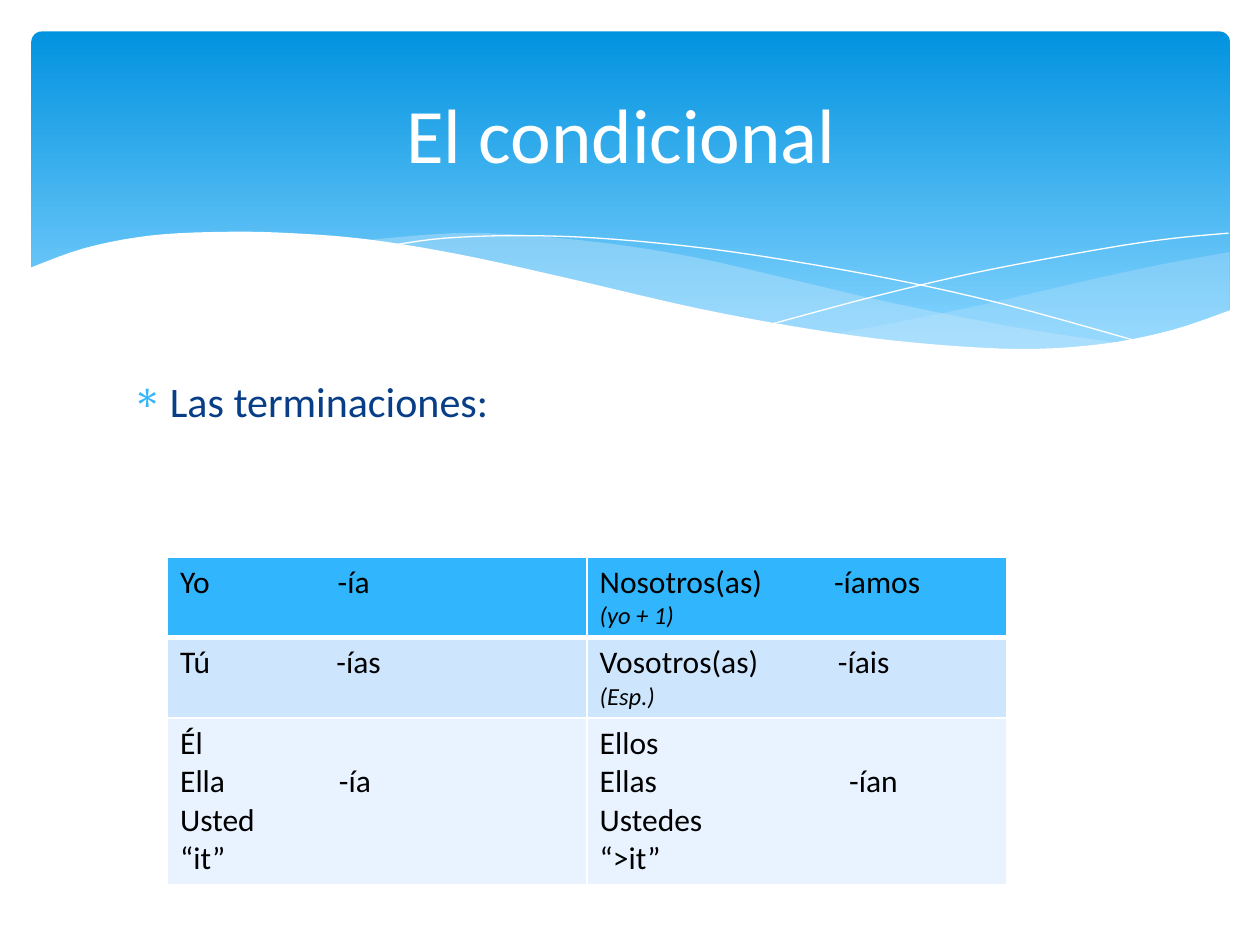
import pptx
import pptx.dml.color
import pptx.enum.shapes
import pptx.enum.text
import pptx.oxml
import pptx.oxml.ns
import pptx.util
from pptx.util import Inches, Pt

WHITE, SKY, PALE = "FFFFFF", "31B6FD", "C6E7FC"
TITLE = "El condicional "
HEADING = "Las terminaciones:"

# Waves as knots (inches) of smooth edges; a shape joins its edges in order.
RIGHT_SWELL = [
    [(9.76, 2), (9.21, 2.1), (8.61, 2.23), (7.79, 2.42), (7.06, 2.57), (6.61, 2.65)],
    [(6.61, 2.65), (7.32, 2.74), (8.03, 2.78), (8.63, 2.75), (9.21, 2.65), (9.76, 2.47)],
]
LEFT_SWELL = [
    [(8.93, 2.73), (8.07, 2.6), (7.06, 2.4), (6.29, 2.22), (5.55, 2.05), (4.89, 1.94),
     (4.2, 1.87), (3.61, 1.85), (2.86, 1.91)],
    [(2.86, 1.91), (3.62, 2.03), (4.49, 2.22), (5.66, 2.48), (6.5, 2.64), (7.22, 2.74),
     (7.96, 2.78), (8.48, 2.77), (8.93, 2.73)],
]
FALLING_LINE = [[(3.09, 1.95), (3.53, 1.89), (4.16, 1.87), (4.89, 1.9), (5.82, 2),
                 (6.95, 2.19), (7.95, 2.41), (9.07, 2.72)]]
RISING_LINE = [[(6.13, 2.57), (6.95, 2.35), (7.76, 2.16), (8.66, 1.99), (9.24, 1.9), (9.75, 1.85)]]
WHITE_WAVE = [
    [(9.77, 2.46), (9.3, 2.62), (8.75, 2.73), (8.09, 2.77), (7.26, 2.72), (6.48, 2.62),
     (5.55, 2.45), (4.47, 2.2), (3.65, 2.02), (2.92, 1.9), (2.3, 1.85), (1.77, 1.84),
     (1.19, 1.87), (0.67, 1.97), (0.23, 2.13)],
    [(0.23, 3.29), (9.77, 3.29)],
]
WAVES = [  # edges, fill, opacity %; no fill means an open white line
    (RIGHT_SWELL, PALE, 29),
    (LEFT_SWELL, PALE, 40),
    (FALLING_LINE, None, 100),
    (RISING_LINE, None, 100),
    (WHITE_WAVE, WHITE, 100),
]

# Each cell: tab stop in inches, then paragraphs.
ENDINGS = [
    [(1.25, ["Yo\t-ía"]), (1.86, ["Nosotros(as)\t-íamos", "(yo + 1)"])],
    [(1.24, ["Tú\t-ías"]), (1.89, ["Vosotros(as)\t-íais", "(Esp.)"])],
    [(1.26, ["Él", "Ella\t-ía", "Usted", "“it”"]),
     (1.98, ["Ellos", "Ellas\t-ían", "Ustedes", "“>it”"])],
]
ROW_FILLS = [SKY, "CEE5FE", "E8F3FF"]
ROW_HEIGHTS = [0.64, 0.64, 1.32]
COLUMN_WIDTH = 3.33


def color(value):
    return pptx.dml.color.RGBColor.from_string(value)


def xml(tag, attributes="", inner=""):
    namespace = pptx.oxml.ns.nsdecls("a")
    return pptx.oxml.parse_xml(f"<a:{tag} {namespace} {attributes}>{inner}</a:{tag}>")


def solid(value):
    return f'<a:solidFill><a:srgbClr val="{value}"/></a:solidFill>'


def smooth(knots, steps=5):
    """Points of a Catmull-Rom curve through the knots."""
    if len(knots) < 3:
        return knots
    padded = [knots[0], *knots, knots[-1]]
    points = []
    for a, b, c, d in zip(padded, padded[1:], padded[2:], padded[3:]):
        for step in range(steps):
            t = step / steps
            points.append(tuple(
                q + t * (r - p) / 2 + t * t * (2 * p - 5 * q + 4 * r - s) / 2
                + t ** 3 * (3 * q - p - 3 * r + s) / 2
                for p, q, r, s in zip(a, b, c, d)))
    return points + [knots[-1]]


def add_wave(shapes, edges, fill, opacity):
    points = [(Inches(x), Inches(y)) for edge in edges for x, y in smooth(edge)]
    builder = shapes.build_freeform(*points[0])
    builder.add_line_segments(points[1:], close=fill is not None)
    shape = builder.convert_to_shape()
    shape.shadow.inherit = False
    if fill is None:
        shape.fill.background()
        shape.line.color.rgb = color(WHITE)
        shape.line.width = Pt(0)
        return
    shape.line.fill.background()
    shape.fill.solid()
    shape.fill.fore_color.rgb = color(fill)
    if opacity < 100:
        srgb = shape.fill._xPr.find(".//" + pptx.oxml.ns.qn("a:srgbClr"))
        srgb.append(xml("alpha", f'val="{opacity * 1000}"'))


def add_run(paragraph, text, size, value, italic=False):
    run = paragraph.add_run()
    run.text = text
    run.font.name = "Calibri"
    run.font.size = Pt(size)
    run.font.italic = italic
    run.font.color.rgb = color(value)


def add_text_box(shapes, box, text, size, value):
    frame = shapes.add_textbox(*map(Inches, box)).text_frame
    frame.word_wrap = True
    add_run(frame.paragraphs[0], text, size, value)
    return frame


def fill_cell(cell, row, tab, lines):
    for index, line in enumerate(lines):
        frame = cell.text_frame
        paragraph = frame.add_paragraph() if index else frame.paragraphs[0]
        note = line.startswith("(")
        add_run(paragraph, line, 14 if note else 18, "000000", note)
        if "\t" in line:
            paragraph._p.get_or_add_pPr().append(
                xml("tabLst", "", f'<a:tab pos="{Inches(tab)}" algn="l"/>'))
    cell.fill.solid()
    cell.fill.fore_color.rgb = color(ROW_FILLS[row])
    widths = {"lnL": 1, "lnR": 1, "lnT": 3 if row == 1 else 1, "lnB": 3 if row == 0 else 1}
    for position, (side, width) in enumerate(widths.items()):
        cell._tc.get_or_add_tcPr().insert(
            position, xml(side, f'w="{Pt(width)}"', solid(WHITE)))


def add_banner(shapes):
    banner = shapes.add_shape(pptx.enum.shapes.MSO_SHAPE.ROUNDED_RECTANGLE,
                              Inches(0.25), Inches(0.25), Inches(9.51), Inches(2.7))
    banner.adjustments[0] = 0.03
    banner.shadow.inherit = False
    banner.line.fill.background()
    banner.fill.gradient()
    banner.fill.gradient_angle = 270
    for stop, position, value in zip(banner.fill.gradient_stops, (0, 0.9), ("0293E0", "83D3FE")):
        stop.position = position
        stop.color.rgb = color(value)


def add_endings_table(shapes):
    table = shapes.add_table(len(ENDINGS), 2, Inches(1.33), Inches(4.42),
                             Inches(2 * COLUMN_WIDTH), Inches(sum(ROW_HEIGHTS))).table
    table.first_row = table.horz_banding = False
    for column in table.columns:
        column.width = Inches(COLUMN_WIDTH)
    for row, cells in enumerate(ENDINGS):
        table.rows[row].height = Inches(ROW_HEIGHTS[row])
        for column, (tab, lines) in enumerate(cells):
            fill_cell(table.cell(row, column), row, tab, lines)


def main():
    presentation = pptx.Presentation()
    presentation.slide_width, presentation.slide_height = Inches(10), Inches(7.5)
    shapes = presentation.slides.add_slide(presentation.slide_layouts[6]).shapes

    add_banner(shapes)
    for wave in WAVES:
        add_wave(shapes, *wave)

    body = add_text_box(shapes, (0.95, 2.93, 8.1, 3.77), HEADING, 24, "073E87")
    bullet = body.paragraphs[0]
    bullet.space_before = Pt(4.8)
    properties = bullet._p.get_or_add_pPr()
    properties.set("marL", str(Inches(0.3)))
    properties.set("indent", str(Inches(-0.3)))
    properties.append(xml("buClr", "", f'<a:srgbClr val="{SKY}"/>'))
    properties.append(xml("buChar", 'char="∗"'))

    title = add_text_box(shapes, (0.5, 0.37, 9, 1.37), TITLE, 44, WHITE)
    title.vertical_anchor = pptx.enum.text.MSO_ANCHOR.MIDDLE
    title.paragraphs[0].alignment = pptx.enum.text.PP_ALIGN.CENTER

    add_endings_table(shapes)
    presentation.save("out.pptx")


if __name__ == "__main__":
    main()
